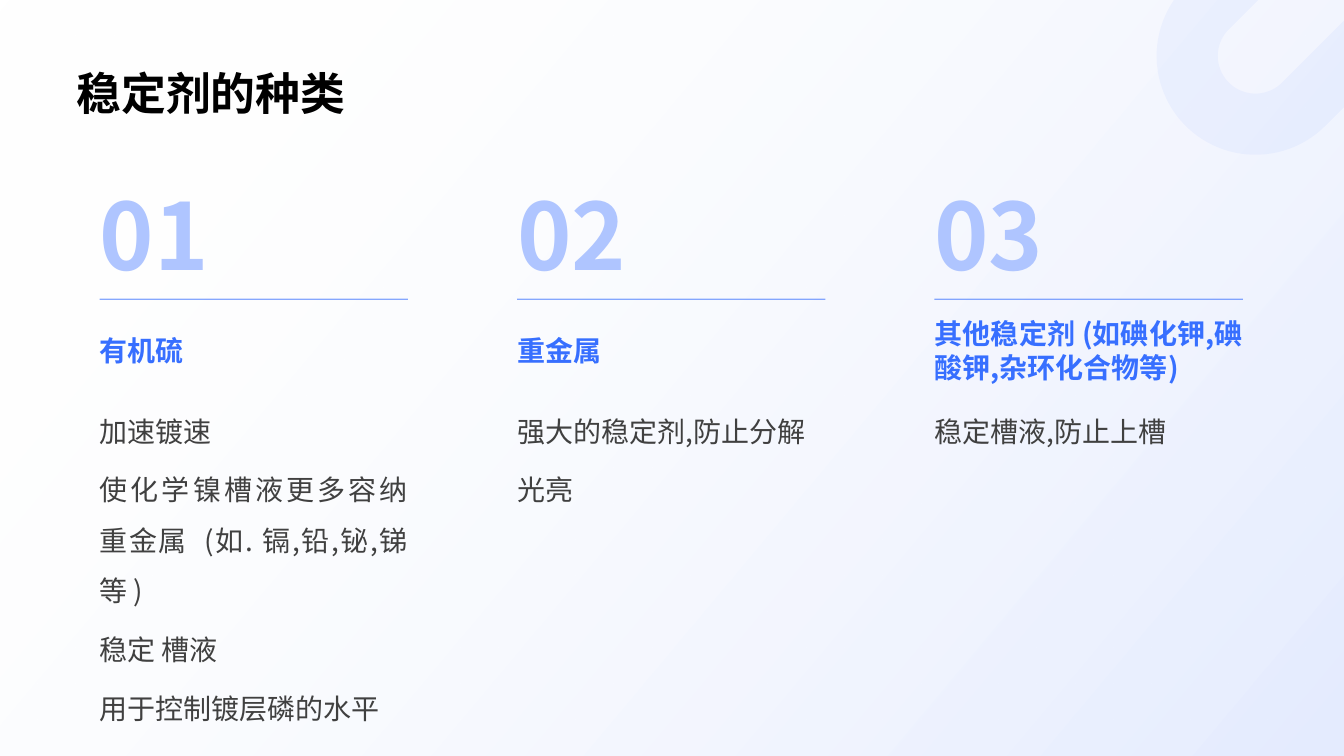
from math import asin, cos, degrees, radians, sin

from lxml import etree
from pptx import Presentation
from pptx.dml.color import RGBColor
from pptx.enum.shapes import MSO_CONNECTOR, MSO_SHAPE
from pptx.enum.text import MSO_ANCHOR, MSO_AUTO_SIZE, PP_ALIGN
from pptx.oxml.ns import qn
from pptx.util import Cm, Pt

STRAIGHT = MSO_CONNECTOR.STRAIGHT
RECTANGLE = MSO_SHAPE.RECTANGLE
TOP, MIDDLE, BOTTOM = MSO_ANCHOR.TOP, MSO_ANCHOR.MIDDLE, MSO_ANCHOR.BOTTOM
LEFT, JUSTIFY = PP_ALIGN.LEFT, PP_ALIGN.JUSTIFY
NO_AUTOFIT = MSO_AUTO_SIZE.NONE

# Content
TITLE = "稳定剂的种类"
COLUMNS = [
    ("01", "有机硫", [
        "加速镀速",
        "使化学镍槽液更多容纳重金属  (如. 镉,铅,铋,锑等 )",
        "稳定 槽液",
        "用于控制镀层磷的水平",
    ]),
    ("02", "重金属", ["强大的稳定剂,防止分解", "光亮"]),
    ("03", "其他稳定剂 (如碘化钾,碘酸钾,杂环化合物等)", ["稳定槽液,防止上槽"]),
]

# Theme: colours, fonts and type sizes
CJK = "Noto Sans CJK SC"
THEME = {
    "accent": RGBColor(0x37, 0x6F, 0xFF),
    "white": RGBColor(0xFF, 0xFF, 0xFF),
    "mist": RGBColor(0xE5, 0xEC, 0xFF),
    "title": {"size": Pt(32), "bold": True, "name": "Arial", "color": RGBColor(0, 0, 0)},
    "number": {"size": Pt(66), "bold": True, "name": CJK, "color": RGBColor(0xAF, 0xC5, 0xFF)},
    "heading": {"size": Pt(20), "bold": True, "name": CJK, "color": RGBColor(0x37, 0x6F, 0xFF)},
    "list": {"size": Pt(20), "bold": False, "name": CJK, "color": RGBColor(0x40, 0x40, 0x40)},
}
PARAGRAPH = {"alignment": LEFT, "line_spacing": 1.0, "space_before": Pt(0), "space_after": Pt(0)}
HEADING_PARAGRAPH = {**PARAGRAPH, "alignment": JUSTIFY}
LIST_PARAGRAPH = {**HEADING_PARAGRAPH, "line_spacing": 1.5, "space_after": Pt(6)}

# Layout in centimetres
PAGE_WIDTH, PAGE_HEIGHT = 33.87, 19.05
COLUMN_LEFT, COLUMN_PITCH, COLUMN_WIDTH = 2.51, 10.52, 7.77
RULE_TOP = 7.54


def apply_format(target, values):
    for name, value in values.items():
        setattr(target, name, value)


def set_alpha(color_element, percent):
    etree.SubElement(color_element, qn("a:alpha")).set("val", str(percent * 1000))


def place(box, left, top, width, height):
    apply_format(box, {"left": Cm(left), "top": Cm(top), "width": Cm(width), "height": Cm(height)})


def write(box, lines, style, anchor, paragraph=PARAGRAPH, wrap=True):
    frame = box.text_frame
    apply_format(frame, {
        "margin_left": 0, "margin_top": 0, "margin_right": 0, "margin_bottom": 0,
        "auto_size": NO_AUTOFIT, "word_wrap": wrap, "vertical_anchor": anchor,
    })
    for index, line in enumerate(lines):
        para = frame.add_paragraph() if index else frame.paragraphs[0]
        apply_format(para, paragraph)
        span = para.add_run()
        span.text = line
        apply_format(span.font, {key: THEME[style][key] for key in ("size", "bold", "name")})
        span.font.color.rgb = THEME[style]["color"]
        etree.SubElement(span.font._element, qn("a:ea")).set("typeface", CJK)


def remove_bullets(box):
    for para in box.text_frame.paragraphs:
        properties = para._p.get_or_add_pPr()
        properties.set("marL", "0")
        properties.set("indent", "0")
        etree.SubElement(properties, qn("a:buNone"))


def arc(center_x, center_y, radius, start, end, steps=48):
    angles = [radians(start + (end - start) * step / steps) for step in range(steps + 1)]
    return [(Cm(center_x + radius * cos(a)), Cm(center_y + radius * sin(a))) for a in angles]


def send_to_back(shape, layer):
    tree = shape._element.getparent()
    tree.remove(shape._element)
    tree.insert(2 + layer, shape._element)


def add_backdrop(page):
    # Diagonal gradient
    wash = page.shapes.add_shape(RECTANGLE, 0, 0, Cm(PAGE_WIDTH), Cm(PAGE_HEIGHT))
    wash.fill.gradient()
    wash.fill.gradient_angle = 320
    for stop, color, position in zip(wash.fill.gradient_stops, ("white", "mist"), (0, 1)):
        stop.color.rgb = THEME[color]
        stop.position = position
    set_alpha(next(wash._element.iter(qn("a:srgbClr"))), 0)

    # Slanted loop cut off by the top right corner
    center_x, center_y, outer, inner = 31.64, 1.41, 2.49, 0.95
    top_angle = 180 + degrees(asin(center_y / outer))
    slant = center_x + center_y
    edge = slant - inner * 2 ** 0.5
    points = arc(center_x, center_y, outer, 45, top_angle)
    points += [(Cm(edge), 0)]
    points += arc(center_x, center_y, inner, 225, 45)
    for radius in (inner, outer):
        corner_y = center_y + radius * 2 ** 0.5 - (PAGE_WIDTH - center_x)
        points.append((Cm(PAGE_WIDTH), Cm(corner_y)))
    builder = page.shapes.build_freeform(*points[0])
    builder.add_line_segments(points[1:])
    loop = builder.convert_to_shape()
    loop.fill.solid()
    loop.fill.fore_color.rgb = THEME["accent"]
    set_alpha(next(loop._element.iter(qn("a:srgbClr"))), 5)

    for layer, shape in enumerate((wash, loop)):
        shape.line.fill.background()
        shape.shadow.inherit = False
        send_to_back(shape, layer)


def add_rule(page, left):
    rule = page.shapes.add_connector(
        STRAIGHT, Cm(left), Cm(RULE_TOP), Cm(left + COLUMN_WIDTH), Cm(RULE_TOP))
    rule.line.width = Pt(1)
    rule.line.color.rgb = THEME["accent"]
    set_alpha(next(rule._element.iter(qn("a:srgbClr"))), 60)
    etree.SubElement(rule._element.spPr, qn("a:effectLst"))


def add_column(page, index, list_box):
    number, heading, lines = COLUMNS[index]
    left = COLUMN_LEFT + index * COLUMN_PITCH
    number_box, heading_box = (page.shapes.add_textbox(0, 0, 0, 0) for _ in range(2))
    place(number_box, left, 3.96, COLUMN_WIDTH, 3.33)
    write(number_box, [number], "number", BOTTOM, wrap=False)
    add_rule(page, left)
    place(heading_box, left, 7.9, COLUMN_WIDTH, 1.85)
    write(heading_box, [heading], "heading", MIDDLE, HEADING_PARAGRAPH)
    place(list_box, left, 10.01, COLUMN_WIDTH, 7.34)
    write(list_box, lines, "list", TOP, LIST_PARAGRAPH)
    remove_bullets(list_box)


def main():
    deck = Presentation()
    deck.slide_width, deck.slide_height = Cm(PAGE_WIDTH), Cm(PAGE_HEIGHT)
    page = deck.slides.add_slide(deck.slide_layouts.get_by_name("Comparison"))
    title, *bodies = page.placeholders
    add_backdrop(page)

    # Title
    place(title, 1.93, 0.99, 30, 2.01)
    write(title, [TITLE], "title", BOTTOM)

    # Three columns
    for index, list_box in enumerate(bodies[:len(COLUMNS)]):
        add_column(page, index, list_box)
    for spare in bodies[len(COLUMNS):]:
        spare._element.getparent().remove(spare._element)

    deck.save("out.pptx")


if __name__ == "__main__":
    main()
